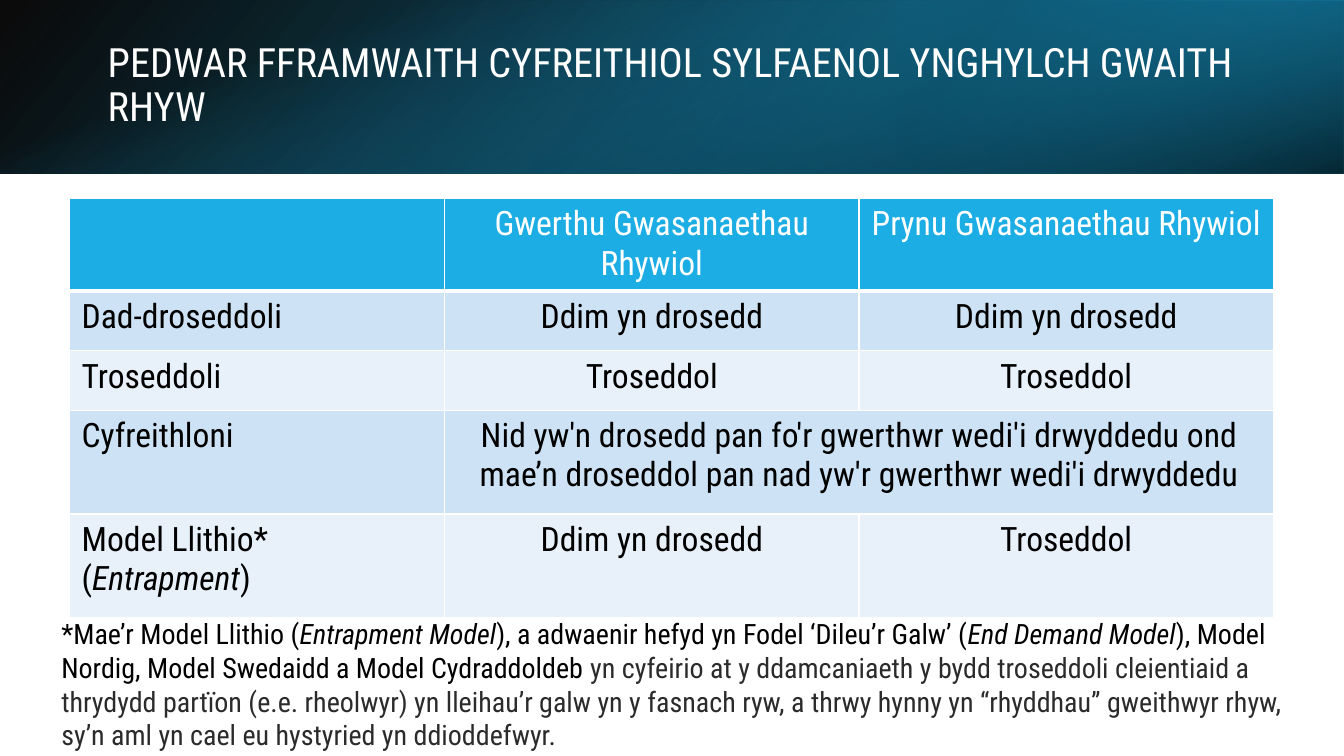
from dataclasses import dataclass

from lxml import etree
from pptx import Presentation
from pptx.dml.color import RGBColor
from pptx.enum.shapes import MSO_SHAPE
from pptx.enum.text import MSO_ANCHOR, MSO_AUTO_SIZE, PP_ALIGN
from pptx.oxml.ns import qn
from pptx.util import Inches, Pt

RECTANGLE = MSO_SHAPE.RECTANGLE
MIDDLE = MSO_ANCHOR.MIDDLE
GROW = MSO_AUTO_SIZE.SHAPE_TO_FIT_TEXT
LEFT, CENTER = PP_ALIGN.LEFT, PP_ALIGN.CENTER


@dataclass(frozen=True)
class Theme:
    font: str = "Roboto Condensed"
    white: str = "FFFFFF"
    black: str = "000000"
    grey: str = "2B2B2B"
    blue: str = "1CADE4"
    mid_blue: str = "1482AC"
    deep_blue: str = "0E5772"
    band_dark: str = "CDE3F5"
    band_light: str = "E8F1FA"
    title_size: float = 28.8
    table_size: float = 24
    note_size: float = 20


THEME = Theme()
ITALIC = {"italic": True}


def apply(target, values):
    for name, value in values.items():
        setattr(target, name, value)


class SlideBuilder:
    def __init__(self, slide, theme):
        self.slide = slide
        self.theme = theme

    def add_runs(self, paragraph, runs, size, color):
        for text, changes in runs:
            run = paragraph.add_run()
            run.text = text
            values = {"name": self.theme.font, "size": Pt(size), "bold": False}
            changes = dict(changes)
            run.font.color.rgb = RGBColor.from_string(changes.pop("color", color))
            apply(run.font, values | changes)

    def gradient(self, box, stops, angle, rotation=0, flip=False):
        shape = self.slide.shapes.add_shape(RECTANGLE, *map(Inches, box))
        shape.shadow.inherit = False
        shape.rotation = rotation
        shape.line.fill.background()
        if flip:
            shape._element.spPr.find(qn("a:xfrm")).set("flipH", "1")
        shape.fill.gradient()
        shape.fill.gradient_angle = 360 - angle
        for stop, (position, color, opacity) in zip(shape.fill.gradient_stops, stops):
            stop.position = position / 100
            stop.color.rgb = RGBColor.from_string(color)
        colors = shape._element.spPr.iter(qn("a:srgbClr"))
        for element, (position, color, opacity) in zip(colors, stops):
            etree.SubElement(element, qn("a:alpha"), val=str(opacity * 1000))

    def text(self, box, runs, size, color, frame_format, paragraph_format):
        shape = self.slide.shapes.add_textbox(*map(Inches, box))
        apply(shape.text_frame, {"word_wrap": True} | frame_format)
        paragraph = shape.text_frame.paragraphs[0]
        apply(paragraph, paragraph_format)
        self.add_runs(paragraph, runs, size, color)

    def borders(self, cell, bottom_width):
        properties = cell._tc.get_or_add_tcPr()
        for side in "LRTB":
            width = bottom_width if side == "B" else 1
            line = etree.SubElement(properties, qn(f"a:ln{side}"), w=str(Pt(width)))
            fill = etree.SubElement(line, qn("a:solidFill"))
            etree.SubElement(fill, qn("a:srgbClr"), val=self.theme.white)

    def table(self, box, widths, heights, rows, merges):
        frame = self.slide.shapes.add_table(len(rows), len(widths), *map(Inches, box))
        table = frame.table
        apply(table, {"first_row": False, "horz_banding": False})
        for column, width in zip(table.columns, widths):
            column.width = Inches(width)
        for row, height in zip(table.rows, heights):
            row.height = Inches(height)
        frame.height = Inches(box[3])
        margins = {
            "margin_left": Inches(0.12),
            "margin_right": Inches(0.12),
            "margin_top": Inches(0.06),
            "margin_bottom": Inches(0.06),
        }
        bands = (self.theme.band_light, self.theme.band_dark)
        for row_index, row in enumerate(rows):
            header = row_index == 0
            fill = self.theme.blue if header else bands[row_index % 2]
            color = self.theme.white if header else self.theme.black
            for column_index, runs in enumerate(row):
                cell = table.cell(row_index, column_index)
                apply(cell, margins)
                self.borders(cell, 3 if header else 1)
                cell.fill.solid()
                cell.fill.fore_color.rgb = RGBColor.from_string(fill)
                paragraph = cell.text_frame.paragraphs[0]
                paragraph.alignment = CENTER if column_index else LEFT
                self.add_runs(paragraph, runs, self.theme.table_size, color)
        for first, last in merges:
            table.cell(*first).merge(table.cell(*last))


def plain(text):
    return [(text, {})]


NOT_A_CRIME = plain("Ddim yn drosedd")
CRIMINAL = plain("Troseddol")
FRAMEWORKS = [
    [[], plain("Gwerthu Gwasanaethau Rhywiol"), plain("Prynu Gwasanaethau Rhywiol")],
    [plain("Dad-droseddoli"), NOT_A_CRIME, NOT_A_CRIME],
    [plain("Troseddoli"), CRIMINAL, CRIMINAL],
    [
        plain("Cyfreithloni"),
        plain(
            "Nid yw'n drosedd pan fo'r gwerthwr wedi'i drwyddedu ond "
            "mae’n droseddol pan nad yw'r gwerthwr wedi'i drwyddedu"
        ),
        [],
    ],
    [
        [("Model Llithio* (", {}), ("Entrapment", ITALIC), (")", {})],
        NOT_A_CRIME,
        CRIMINAL,
    ],
]
FOOTNOTE = [
    ("*Mae’r Model Llithio (", {}),
    ("Entrapment Model", ITALIC),
    ("), a adwaenir hefyd yn Fodel ‘Dileu’r Galw’ (", {}),
    ("End Demand Model", ITALIC),
    ("), Model Nordig, Model Swedaidd a Model Cydraddoldeb ", {}),
    (
        "yn cyfeirio at y ddamcaniaeth y bydd troseddoli cleientiaid a thrydydd "
        "partïon (e.e. rheolwyr) yn lleihau’r galw yn y fasnach ryw, a thrwy hynny "
        "yn “rhyddhau” gweithwyr rhyw, sy’n aml yn cael eu hystyried yn ddioddefwyr.",
        {"color": THEME.grey},
    ),
]


def main():
    presentation = Presentation()
    presentation.slide_width = Inches(13.33)
    presentation.slide_height = Inches(7.5)
    slide = presentation.slides.add_slide(presentation.slide_layouts[6])
    builder = SlideBuilder(slide, THEME)

    builder.gradient(
        (0, 0, 13.33, 1.72),
        [(0, THEME.black, 96), (100, THEME.mid_blue, 100)],
        140,
        flip=True,
    )
    builder.gradient(
        (8.89, 0, 4.44, 1.72),
        [(19, THEME.deep_blue, 68), (100, THEME.blue, 79)],
        320,
        rotation=180,
        flip=True,
    )
    builder.gradient(
        (5.8, -5.8, 1.72, 13.33),
        [(23, THEME.blue, 0), (99, THEME.black, 74)],
        340,
        rotation=90,
    )
    builder.text(
        (0.97, 0.38, 11.52, 0.96),
        plain("PEDWAR FFRAMWAITH CYFREITHIOL SYLFAENOL YNGHYLCH GWAITH RHYW"),
        THEME.title_size,
        THEME.white,
        {"vertical_anchor": MIDDLE},
        {"line_spacing": 0.9},
    )
    builder.table(
        (0.69, 1.97, 11.95, 4.17),
        [3.72, 4.11, 4.11],
        [0.59, 0.59, 0.59, 1.03, 1.03],
        FRAMEWORKS,
        [((3, 1), (3, 2))],
    )
    builder.text(
        (0.51, 6.07, 12.32, 1.45),
        FOOTNOTE,
        THEME.note_size,
        THEME.black,
        {"auto_size": GROW},
        {"alignment": LEFT},
    )
    presentation.save("out.pptx")


if __name__ == "__main__":
    main()
